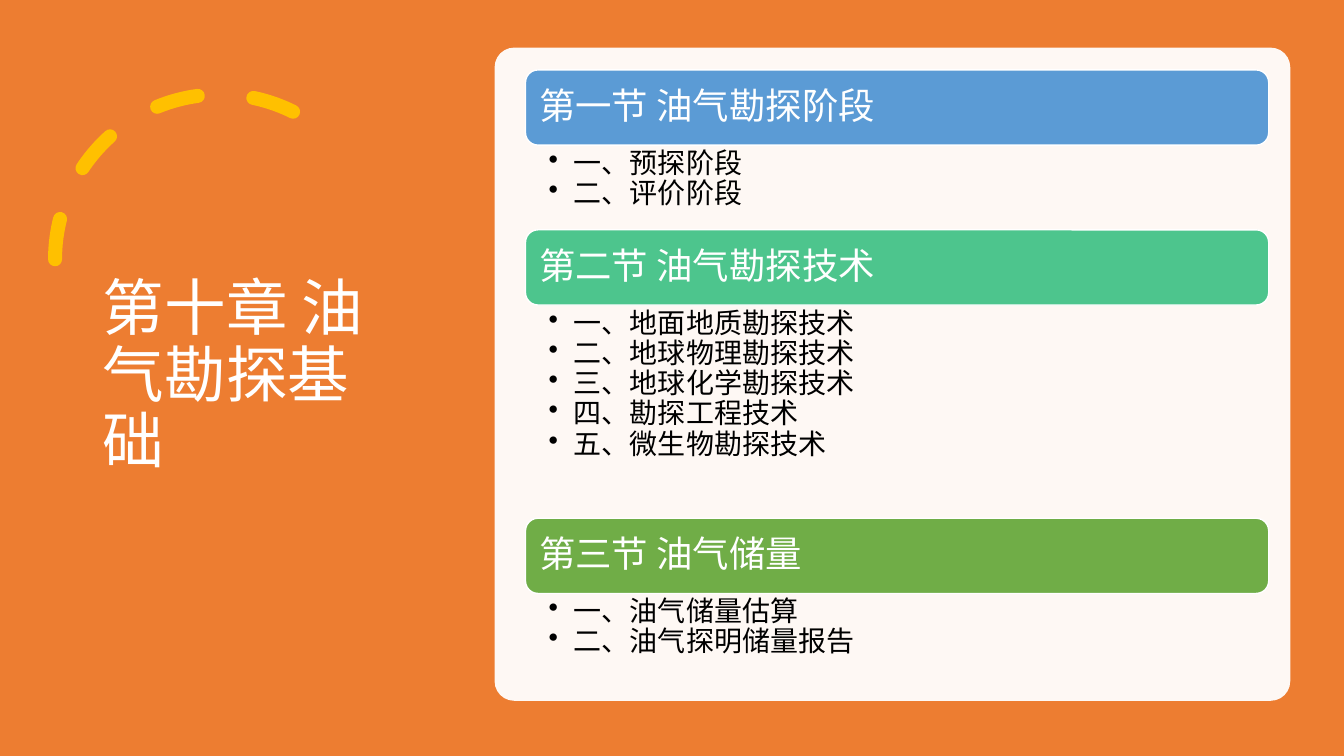
import pptx
import pptx.util
import pptx.dml.color
import pptx.enum.shapes
import pptx.enum.text
import pptx.oxml.ns
from lxml import etree

WIDTH, HEIGHT = pptx.util.Inches(13.333), pptx.util.Inches(7.5)
FONT = "Noto Sans CJK SC"
COLORS = {"back": "ED7D31", "arc": "FFC000", "white": "FFFFFF", "black": "000000",
          "blue": "5B9BD5", "teal": "4DC58D", "green": "70AD47"}
SHAPES = pptx.enum.shapes.MSO_SHAPE
ANCHORS = pptx.enum.text.MSO_ANCHOR

SECTIONS = [
    ("第一节 油气勘探阶段", "blue", 11.2, ["一、预探阶段", "二、评价阶段"]),
    ("第二节 油气勘探技术", "teal", 28.2,
     ["一、地面地质勘探技术", "二、地球物理勘探技术", "三、地球化学勘探技术",
      "四、勘探工程技术", "五、微生物勘探技术"]),
    ("第三节 油气储量", "green", 11.2, ["一、油气储量估算", "二、油气探明储量报告"]),
]
SECTION_LEFT, SECTION_TOP, SECTION_WIDTH, HEADER_HEIGHT = 39.1, 9.25, 55.3, 9.95


def box(left, top, width, height):
    """Turn percentages of the slide's size into lengths."""
    return [int(share * side / 100) for share, side in
            ((left, WIDTH), (top, HEIGHT), (width, WIDTH), (height, HEIGHT))]


def rgb(name):
    return pptx.dml.color.RGBColor.from_string(COLORS[name])


def add_xml(parent, tag, **attrs):
    return etree.SubElement(parent, pptx.oxml.ns.qn(tag), attrs)


def set_attrs(target, values):
    for name, value in values.items():
        setattr(target, name, value)


def add_shape(slide, kind, place, fill=None, line=None, line_width=1, adjust=()):
    sp = slide.shapes.add_shape(kind, *box(*place))
    sp.shadow.inherit = False
    for part, color in ((sp.fill, fill), (sp.line.fill, line)):
        if color:
            part.solid()
            part.fore_color.rgb = rgb(color)
        else:
            part.background()
    if line:
        sp.line.width = pptx.util.Pt(line_width)
    for i, value in enumerate(adjust):
        sp.adjustments[i] = value
    return sp


def write(sp, lines, size, color, bullet=False, **frame):
    """Fill a shape with one paragraph per line; frame holds text frame settings."""
    tf = sp.text_frame
    set_attrs(tf, {"word_wrap": True, "auto_size": pptx.enum.text.MSO_AUTO_SIZE.NONE, **frame})
    for i, line in enumerate(lines):
        p = tf.add_paragraph() if i else tf.paragraphs[0]
        set_attrs(p, {"alignment": pptx.enum.text.PP_ALIGN.LEFT, "line_spacing": 0.9,
                      "space_before": 0, "space_after": 0, "level": int(bullet)})
        if bullet:
            pPr = p._p.get_or_add_pPr()
            indent = pptx.util.Inches(0.25)
            pPr.set("marL", str(indent))
            pPr.set("indent", str(-indent))
            add_xml(pPr, "a:buChar", char="•")
        r = p.add_run()
        r.text = line
        set_attrs(r.font, {"name": FONT, "size": pptx.util.Pt(size)})
        r.font.color.rgb = rgb(color)
        add_xml(r._r.get_or_add_rPr(), "a:ea", typeface=FONT)


def add_background(slide):
    sp = add_shape(slide, SHAPES.RECTANGLE, (0, 0, 100, 100), "back")
    slide.shapes._spTree.insert(2, sp._element)


def add_dashed_arc(slide):
    sp = add_shape(slide, SHAPES.ARC, (4.1, 12.5, 24.5, 43.6), line="arc",
                   line_width=10, adjust=(146.13, 0))
    sp.line.dash_style = pptx.enum.dml.MSO_LINE.DASH
    sp.line._get_or_add_ln().set("cap", "rnd")
    sp._element.spPr.xfrm.set("flipH", "1")


def add_title(slide, text):
    title = slide.shapes.title
    set_attrs(title, dict(zip(("left", "top", "width", "height"), box(6.9, 9.3, 24.2, 81.2))))
    write(title, [text], 44, "white", vertical_anchor=ANCHORS.MIDDLE)


def add_panel(slide):
    sp = add_shape(slide, SHAPES.ROUNDED_RECTANGLE, (36.8, 6.3, 59.2, 86.4), "white",
                   adjust=(0.03,))
    color = sp._element.spPr.find(".//" + pptx.oxml.ns.qn("a:srgbClr"))
    add_xml(color, "a:alpha", val="95000")


def add_section(slide, top, heading, color, list_height, items):
    header = add_shape(slide, SHAPES.ROUNDED_RECTANGLE,
                       (SECTION_LEFT, top, SECTION_WIDTH, HEADER_HEIGHT), color, "white")
    inset = pptx.util.Inches(0.1)
    write(header, [heading], 26, "white", vertical_anchor=ANCHORS.MIDDLE,
          margin_left=inset, margin_right=inset)
    place = (SECTION_LEFT, top + HEADER_HEIGHT, SECTION_WIDTH, list_height)
    items_box = slide.shapes.add_textbox(*box(*place))
    write(items_box, items, 20, "black", bullet=True, vertical_anchor=ANCHORS.TOP,
          margin_left=pptx.util.Inches(0.23), margin_right=pptx.util.Inches(0.2),
          margin_top=pptx.util.Inches(0.04), margin_bottom=pptx.util.Inches(0.04))


def main():
    prs = pptx.Presentation()
    set_attrs(prs, {"slide_width": WIDTH, "slide_height": HEIGHT})
    slide = prs.slides.add_slide(prs.slide_layouts[5])
    add_background(slide)
    add_dashed_arc(slide)
    add_title(slide, "第十章 油气勘探基础")
    add_panel(slide)
    top = SECTION_TOP
    for heading, color, list_height, items in SECTIONS:
        add_section(slide, top, heading, color, list_height, items)
        top += HEADER_HEIGHT + list_height
    prs.save("out.pptx")


if __name__ == "__main__":
    main()
